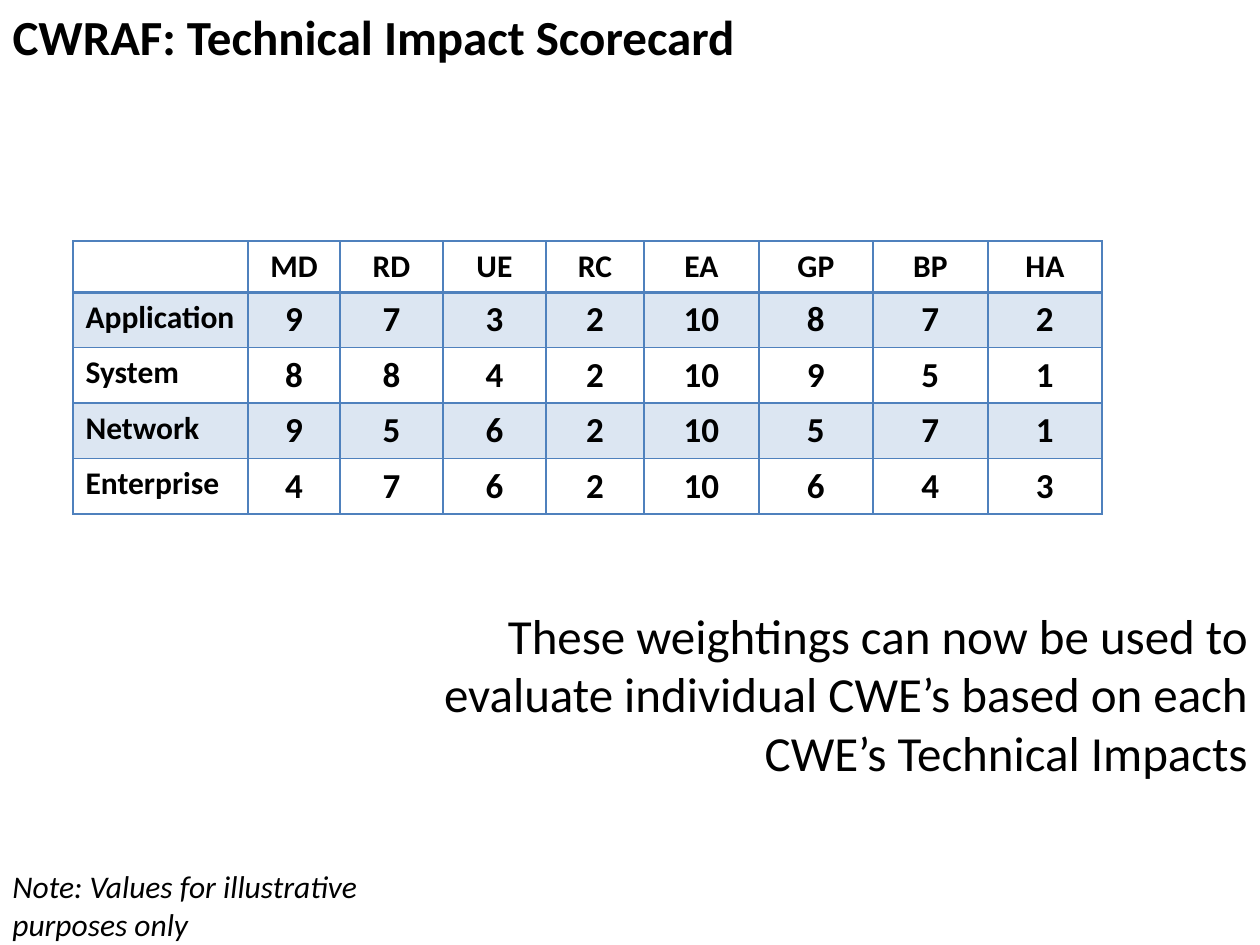
import pptx
import pptx.util
import pptx.dml.color
import pptx.enum.text
import pptx.oxml
import pptx.oxml.ns

PX = 914400 / 126
BLACK = pptx.dml.color.RGBColor(0x00, 0x00, 0x00)
BLUE = pptx.dml.color.RGBColor(0x4F, 0x81, 0xBD)
PALE_BLUE = pptx.dml.color.RGBColor(0xDC, 0xE6, 0xF2)
ALIGN = pptx.enum.text.PP_ALIGN


def px(n):
    return pptx.util.Emu(round(n * PX))


def write(tf, text, size, align=ALIGN.LEFT, bold=False, italic=False):
    p = tf.paragraphs[0]
    p.text = text
    p.alignment = align
    p.font.name = "Calibri"
    p.font.size = pptx.util.Pt(size)
    p.font.bold = bold
    p.font.italic = italic
    p.font.color.rgb = BLACK


prs = pptx.Presentation()
prs.slide_width = px(1260)
prs.slide_height = px(945)
slide = prs.slides.add_slide(prs.slide_layouts[5])

title = slide.shapes.title
title.left, title.top, title.width, title.height = px(0), px(0), px(840), px(72)
title.text_frame.auto_size = pptx.enum.text.MSO_AUTO_SIZE.NONE
write(title.text_frame, "CWRAF: Technical Impact Scorecard", 28, bold=True)

# Scorecard table
scores = [
    ["", "MD", "RD", "UE", "RC", "EA", "GP", "BP", "HA"],
    ["Application", 9, 7, 3, 2, 10, 8, 7, 2],
    ["System", 8, 8, 4, 2, 10, 9, 5, 1],
    ["Network", 9, 5, 6, 2, 10, 5, 7, 1],
    ["Enterprise", 4, 7, 6, 2, 10, 6, 4, 3],
]
col_widths = [175, 92, 103, 103, 98, 115, 114, 115, 114]
row_heights = [51, 55, 55, 55, 55]
table = slide.shapes.add_table(
    len(scores), len(col_widths), px(73), px(241),
    px(sum(col_widths)), px(sum(row_heights))).table
for col, width in zip(table.columns, col_widths):
    col.width = px(width)
for row, height in zip(table.rows, row_heights):
    row.height = px(height)

for r, values in enumerate(scores):
    for c, value in enumerate(values):
        cell = table.cell(r, c)
        size = 20 if r and c else 18
        align = ALIGN.CENTER if c else ALIGN.LEFT
        write(cell.text_frame, str(value), size, align, bold=True)
        if r % 2:
            cell.fill.solid()
            cell.fill.fore_color.rgb = PALE_BLUE
        else:
            cell.fill.background()
        borders = {"L": 1, "R": 1, "T": 2 if r == 1 else 1, "B": 2 if r == 0 else 1}
        tcPr = cell._tc.get_or_add_tcPr()
        for i, (side, points) in enumerate(borders.items()):
            tcPr.insert(i, pptx.oxml.parse_xml(
                f'<a:ln{side} {pptx.oxml.ns.nsdecls("a")} w="{pptx.util.Pt(points)}">'
                f'<a:solidFill><a:srgbClr val="{BLUE}"/></a:solidFill></a:ln{side}>'))

# Conclusion and note
conclusion = ("These weightings can now be used to evaluate individual CWE’s "
              "based on each CWE’s Technical Impacts")
note = "Note: Values for illustrative purposes only"
for box, text, size, align, italic in [
    ((410, 599, 850, 190), conclusion, 28, ALIGN.RIGHT, False),
    ((0, 861, 431, 89), note, 18, ALIGN.LEFT, True),
]:
    tf = slide.shapes.add_textbox(*map(px, box)).text_frame
    tf.word_wrap = True
    write(tf, text, size, align, italic=italic)

prs.save("out.pptx")
